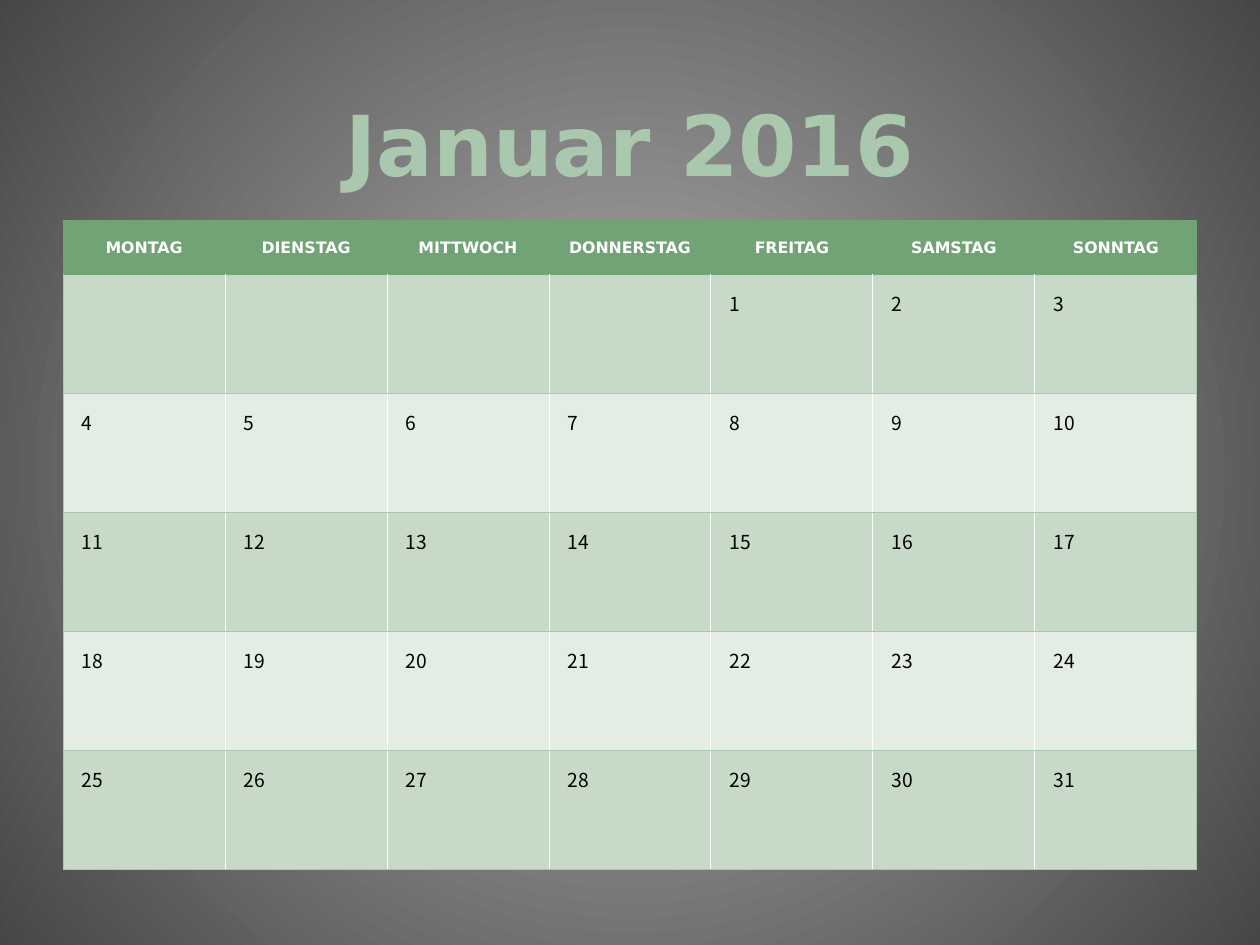
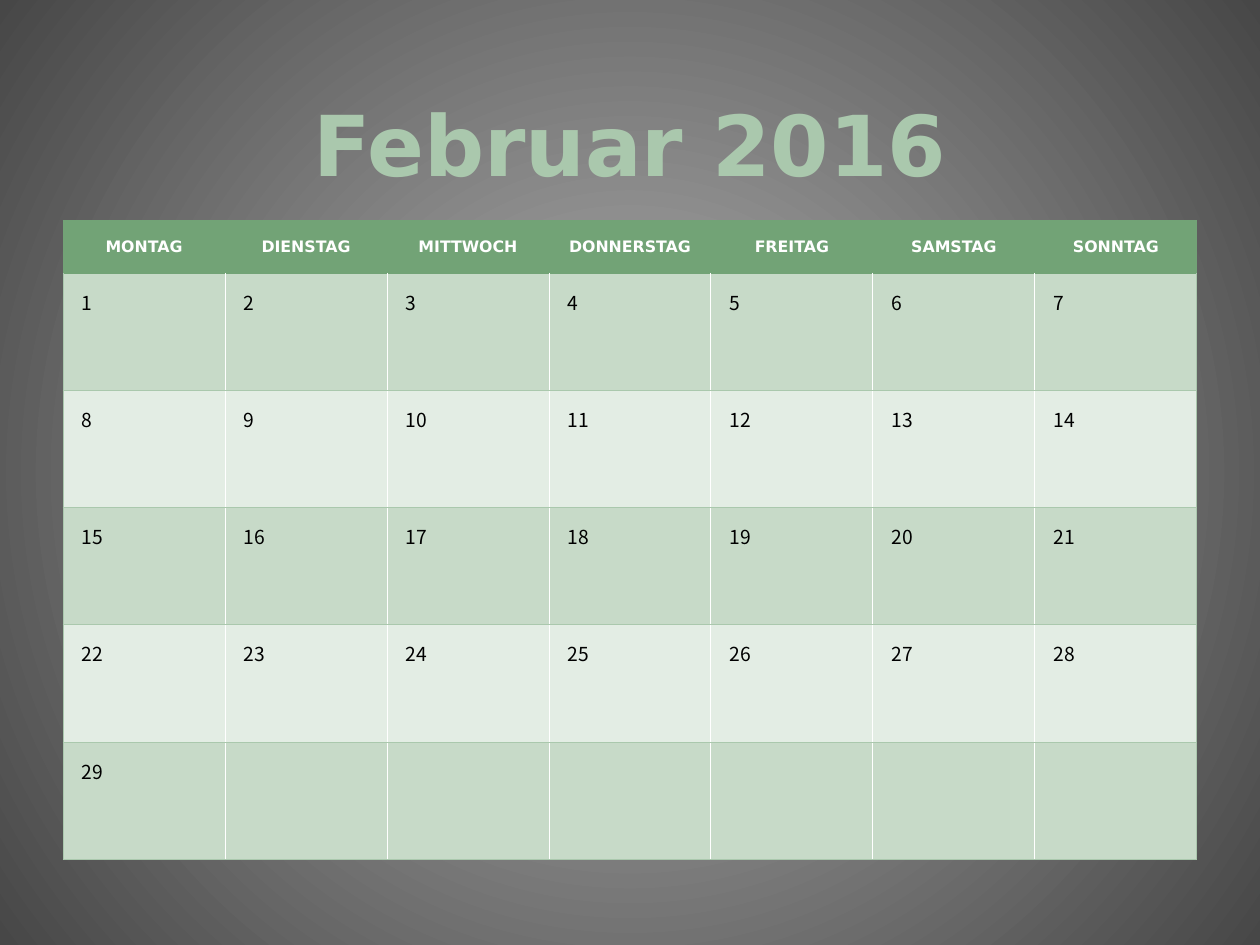
"""Builds a two-month calendar, one slide per month."""
from lxml import etree
from pptx import Presentation
from pptx.dml.color import RGBColor
from pptx.enum.text import MSO_ANCHOR, PP_ALIGN
from pptx.oxml.ns import qn
from pptx.util import Inches, Pt

WEEKDAYS = ["MONTAG", "DIENSTAG", "MITTWOCH", "DONNERSTAG", "FREITAG", "SAMSTAG", "SONNTAG"]
MONTHS = [
    {"title": "Januar 2016", "first_column": 4, "days": 31, "header": 0.43, "height": 5.15},
    {"title": "Februar 2016", "first_column": 0, "days": 29, "header": 0.42, "height": 5.07},
]
WEEKS = 5
LEFT, WIDTH = 0.5, 9
TABLE_TOP = 1.75

CENTER = PP_ALIGN.CENTER
MIDDLE, BOTTOM = MSO_ANCHOR.MIDDLE, MSO_ANCHOR.BOTTOM
HEAD_FONT, DAY_FONT = "DejaVu Sans", "Noto Sans CJK SC"

WHITE = RGBColor(0xFF, 0xFF, 0xFF)
BLACK = RGBColor(0x00, 0x00, 0x00)
GREEN = RGBColor(0x72, 0xA3, 0x76)
SOFT_GREEN = RGBColor(0xAA, 0xC8, 0xAD)
BANDS = [RGBColor(0xC7, 0xDA, 0xC8), RGBColor(0xE3, 0xED, 0xE4)]
GLOW = [RGBColor(0xB1, 0xB1, 0xB1), RGBColor(0x47, 0x47, 0x47)]


def set_background(master):
    fill = master.background.fill
    fill.gradient()
    for stop, color in zip(fill.gradient_stops, GLOW):
        stop.color.rgb = color
    grad = next(master.element.iter(qn("a:gradFill")))
    grad.remove(grad.find(qn("a:lin")))
    circle = etree.SubElement(grad, qn("a:path"), path="circle")
    etree.SubElement(circle, qn("a:fillToRect"), l="50000", t="50000", r="50000", b="50000")


def write(tf, text, font, size, color, bold):
    tf.text = text
    p = tf.paragraphs[0]
    f = p.runs[0].font
    f.name, f.size, f.bold = font, Pt(size), bold
    f.color.rgb = color
    return p


def add_title(s, text):
    sp = s.shapes.add_textbox(Inches(LEFT), Inches(0.33), Inches(WIDTH), Inches(1.25))
    tf = sp.text_frame
    tf.word_wrap = True
    tf.vertical_anchor = BOTTOM
    write(tf, text, HEAD_FONT, 48, SOFT_GREEN, True).alignment = CENTER


def paint(cell, fill, left, right, top, bottom):
    tc_pr = cell._tc.get_or_add_tcPr()
    for side, color in zip("LRTB", (left, right, top, bottom)):
        ln = etree.SubElement(tc_pr, qn(f"a:ln{side}"), w=str(Pt(0.5)))
        solid = etree.SubElement(ln, qn("a:solidFill"))
        etree.SubElement(solid, qn("a:srgbClr"), val=str(color))
    cell.fill.solid()
    cell.fill.fore_color.rgb = fill


def add_calendar(s, month):
    columns = len(WEEKDAYS)
    table = s.shapes.add_table(WEEKS + 1, columns, Inches(LEFT), Inches(TABLE_TOP),
                               Inches(WIDTH), Inches(month["height"])).table
    week_height = (month["height"] - month["header"]) / WEEKS
    for i, row in enumerate(table.rows):
        row.height = Inches(week_height if i else month["header"])

    for col, name in enumerate(WEEKDAYS):
        cell = table.cell(0, col)
        paint(cell, GREEN, GREEN, GREEN, GREEN, GREEN)
        cell.vertical_anchor = MIDDLE
        write(cell.text_frame, name, HEAD_FONT, 9, WHITE, True).alignment = CENTER

    for i in range(WEEKS * columns):
        week, col = divmod(i, columns)
        cell = table.cell(week + 1, col)
        paint(cell, BANDS[week % 2],
              left=WHITE if col else SOFT_GREEN,
              right=WHITE if col < columns - 1 else SOFT_GREEN,
              top=SOFT_GREEN if week else GREEN,
              bottom=SOFT_GREEN)
        day = i - month["first_column"] + 1
        if 1 <= day <= month["days"]:
            p = write(cell.text_frame, str(day), DAY_FONT, 11, BLACK, False)
            p.line_spacing = 1.3
            p._p.get_or_add_pPr().set("marL", str(Inches(0.05)))


def main():
    prs = Presentation()
    prs.slide_width, prs.slide_height = Inches(10), Inches(7.5)
    set_background(prs.slide_master)
    for month in MONTHS:
        s = prs.slides.add_slide(prs.slide_layouts[6])
        add_title(s, month["title"])
        add_calendar(s, month)
    prs.save("out.pptx")


if __name__ == "__main__":
    main()
